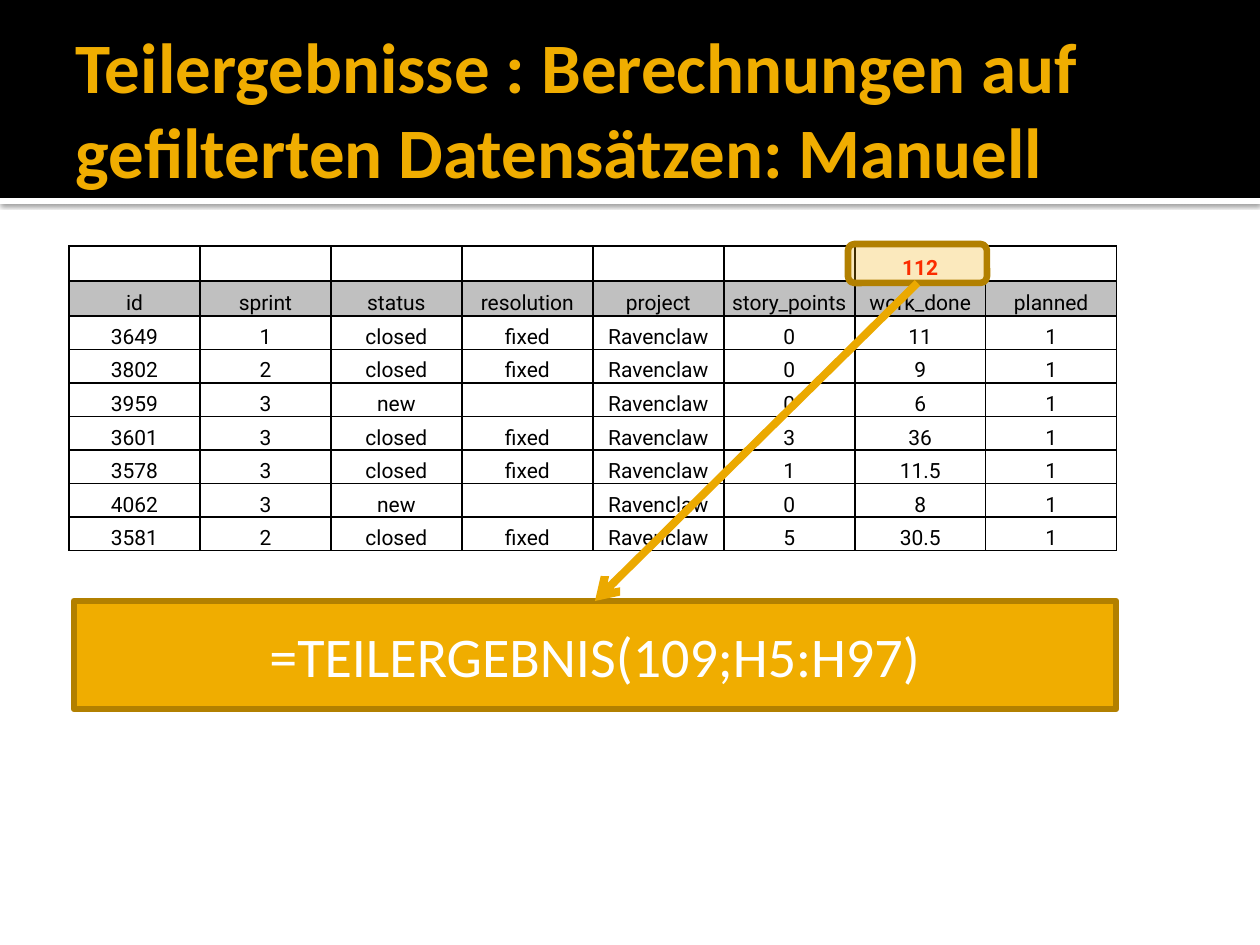
from dataclasses import dataclass

import pptx
import pptx.dml.color
import pptx.enum.shapes
import pptx.enum.text
import pptx.oxml
import pptx.oxml.ns
import pptx.util
from lxml import etree

PX_PER_INCH = 126
SHAPE = pptx.enum.shapes.MSO_SHAPE
ALIGN = pptx.enum.text.PP_ALIGN
ANCHOR = pptx.enum.text.MSO_ANCHOR


@dataclass(frozen=True)
class Theme:
    black: str = "000000"
    white: str = "FFFFFF"
    amber: str = "F0AD00"
    amber_outline: str = "B28000"
    arrow: str = "EBA900"
    header: str = "C0C0C0"
    total: str = "FF0000"
    font: str = "Calibri"
    table_font: str = "Roboto"
    title_size: float = 40.5
    formula_size: float = 32
    table_size: float = 12
    outline_width: float = 3.78
    arrow_width: float = 4.5
    border_width: float = 1


@dataclass(frozen=True)
class Box:
    left: int
    top: int
    width: int
    height: int

    def emu(self) -> tuple:
        return tuple(px(value) for value in (self.left, self.top, self.width, self.height))


THEME = Theme()
TITLE_BAND = Box(0, 0, 1260, 198)
TITLE_RULE = Box(0, 198, 1260, 6)
TITLE = Box(63, 21, 1134, 173)
TABLE = Box(69, 246, 1048, 305)
TOTAL_MARK = Box(848, 244, 139, 39)
FORMULA = Box(74, 601, 1042, 108)

TOP_ROW_HEIGHT = 35
TOP_ROW_COUNT = 2
ROWS = [
    ("", "", "", "", "", "", "112", ""),
    ("id", "sprint", "status", "resolution", "project", "story_points", "work_done", "planned"),
    ("3649", "1", "closed", "fixed", "Ravenclaw", "0", "11", "1"),
    ("3802", "2", "closed", "fixed", "Ravenclaw", "0", "9", "1"),
    ("3959", "3", "new", "", "Ravenclaw", "0", "6", "1"),
    ("3601", "3", "closed", "fixed", "Ravenclaw", "3", "36", "1"),
    ("3578", "3", "closed", "fixed", "Ravenclaw", "1", "11.5", "1"),
    ("4062", "3", "new", "", "Ravenclaw", "0", "8", "1"),
    ("3581", "2", "closed", "fixed", "Ravenclaw", "5", "30.5", "1"),
]


def px(value: float) -> int:
    return round(value * 914400 / PX_PER_INCH)


def rgb(color: str) -> pptx.dml.color.RGBColor:
    return pptx.dml.color.RGBColor.from_string(color)


def add_xml(parent, xml: str) -> None:
    """Append a DrawingML fragment to an element."""
    namespace = pptx.oxml.ns.nsdecls("a")
    tag, rest = xml[:xml.index(">")].rstrip("/"), xml[xml.index(">"):]
    closing = "/" if xml[:xml.index(">")].endswith("/") else ""
    parent.append(pptx.oxml.parse_xml(f"{tag} {namespace}{closing}{rest}"))


def style_paragraph(paragraph, font: str, size: float, color: str, align, bold: bool = False) -> None:
    paragraph.alignment = align
    paragraph.font.name = font
    paragraph.font.size = pptx.util.Pt(size)
    paragraph.font.bold = bold
    paragraph.font.color.rgb = rgb(color)


def add_box(slide, kind, box: Box, fill: str, outline: str = ""):
    shape = slide.shapes.add_shape(kind, *box.emu())
    shape.shadow.inherit = False
    shape.fill.solid()
    shape.fill.fore_color.rgb = rgb(fill)
    if outline:
        shape.line.color.rgb = rgb(outline)
        shape.line.width = pptx.util.Pt(THEME.outline_width)
    else:
        shape.line.fill.background()
    return shape


def add_title_bands(slide) -> None:
    rule = add_box(slide, SHAPE.RECTANGLE, TITLE_RULE, THEME.white)
    effects = rule.element.spPr.find(pptx.oxml.ns.qn("a:effectLst"))
    add_xml(effects, '<a:outerShdw blurRad="31750" dist="10160" dir="5400000" algn="t" rotWithShape="0">'
            f'<a:srgbClr val="{THEME.black}"><a:alpha val="60000"/></a:srgbClr></a:outerShdw>')
    add_box(slide, SHAPE.RECTANGLE, TITLE_BAND, THEME.black)


def style_cell(cell, text: str, is_header: bool, is_total: bool) -> None:
    cell.margin_left = cell.margin_right = cell.margin_top = px(1)
    cell.margin_bottom = 0
    cell.vertical_anchor = ANCHOR.BOTTOM
    paragraph = cell.text_frame.paragraphs[0]
    if text:
        paragraph.text = text
    else:
        add_xml(paragraph._p, f'<a:endParaRPr sz="{round(THEME.table_size * 100)}"/>')
    style_paragraph(paragraph, THEME.table_font, THEME.table_size,
                    THEME.total if is_total else THEME.black, ALIGN.CENTER, is_total)
    width = pptx.util.Pt(THEME.border_width)
    for side in "LRTB":
        add_xml(cell._tc.get_or_add_tcPr(), f'<a:ln{side} w="{width}"><a:solidFill>'
                f'<a:srgbClr val="{THEME.black}"/></a:solidFill></a:ln{side}>')
    if is_header:
        cell.fill.solid()
        cell.fill.fore_color.rgb = rgb(THEME.header)
    else:
        cell.fill.background()


def add_sprint_table(slide) -> None:
    column_count = len(ROWS[0])
    table = slide.shapes.add_table(len(ROWS), column_count, *TABLE.emu()).table
    table.first_row = table.horz_banding = False
    for column in table.columns:
        column.width = px(TABLE.width / column_count)
    data_height = (TABLE.height - TOP_ROW_COUNT * TOP_ROW_HEIGHT) / (len(ROWS) - TOP_ROW_COUNT)
    for row_index, values in enumerate(ROWS):
        table.rows[row_index].height = px(TOP_ROW_HEIGHT if row_index < TOP_ROW_COUNT else data_height)
        for column_index, text in enumerate(values):
            style_cell(table.cell(row_index, column_index), text, row_index == 1,
                       row_index == 0 and bool(text))


def add_total_mark(slide):
    mark = add_box(slide, SHAPE.ROUNDED_RECTANGLE, TOTAL_MARK, THEME.amber, THEME.amber_outline)
    color = mark.element.spPr.find(pptx.oxml.ns.qn("a:solidFill"))[0]
    etree.SubElement(color, pptx.oxml.ns.qn("a:alpha"), val="26000")
    return mark


def place_title(slide) -> None:
    """Format the title placeholder and bring it in front of the bands."""
    title = slide.shapes.title
    title.left, title.top, title.width, title.height = TITLE.emu()
    frame = title.text_frame
    frame.text = "Teilergebnisse : Berechnungen auf gefilterten Datensätzen: Manuell"
    frame.word_wrap = True
    frame.auto_size = pptx.enum.text.MSO_AUTO_SIZE.NONE
    frame.vertical_anchor = ANCHOR.MIDDLE
    frame.margin_left = px(13)
    frame.margin_right = frame.margin_top = frame.margin_bottom = px(6)
    style_paragraph(frame.paragraphs[0], THEME.font, THEME.title_size, THEME.amber, ALIGN.LEFT, True)
    slide.shapes.element.append(title.element)


def add_formula(slide):
    formula = add_box(slide, SHAPE.RECTANGLE, FORMULA, THEME.amber, THEME.amber_outline)
    frame = formula.text_frame
    frame.text = "=TEILERGEBNIS(109;H5:H97)"
    frame.word_wrap = True
    frame.vertical_anchor = ANCHOR.MIDDLE
    style_paragraph(frame.paragraphs[0], THEME.font, THEME.formula_size, THEME.white, ALIGN.CENTER)
    return formula


def add_arrow(slide, source, target) -> None:
    """Join the bottom of source to the top of target."""
    arrow = slide.shapes.add_connector(pptx.enum.shapes.MSO_CONNECTOR.STRAIGHT, 0, 0, 0, 0)
    arrow.begin_connect(source, 2)
    arrow.end_connect(target, 0)
    arrow.line.color.rgb = rgb(THEME.arrow)
    arrow.line.width = pptx.util.Pt(THEME.arrow_width)
    add_xml(arrow.line._get_or_add_ln(), '<a:tailEnd type="arrow"/>')
    add_xml(arrow.element.spPr, "<a:effectLst/>")


def main() -> None:
    presentation = pptx.Presentation()
    presentation.slide_width, presentation.slide_height = px(1260), px(945)
    slide = presentation.slides.add_slide(presentation.slide_layouts[5])
    add_title_bands(slide)
    add_sprint_table(slide)
    total_mark = add_total_mark(slide)
    place_title(slide)
    add_arrow(slide, total_mark, add_formula(slide))
    presentation.save("out.pptx")


if __name__ == "__main__":
    main()
